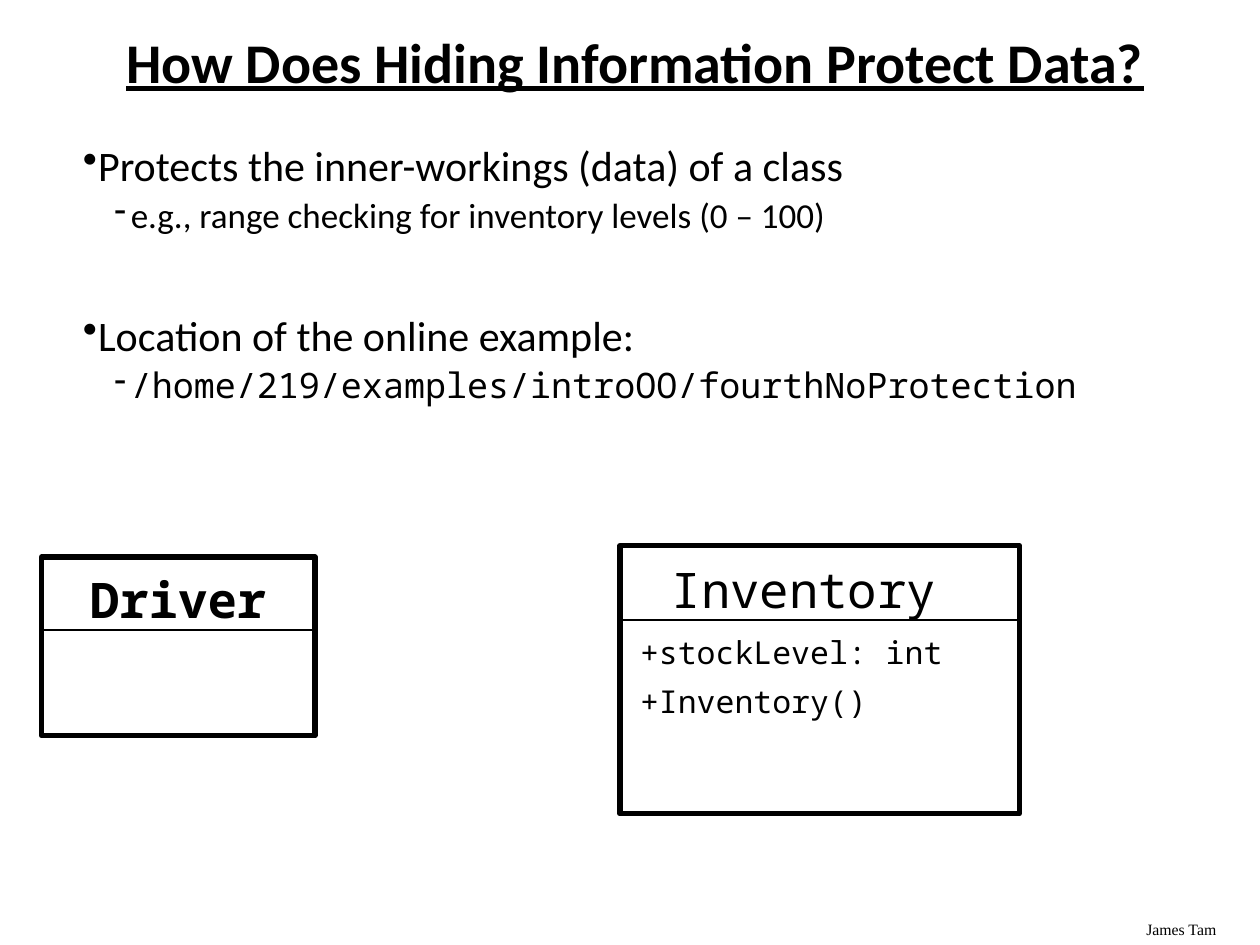
from dataclasses import dataclass

from lxml import etree
from pptx import Presentation
from pptx.dml.color import RGBColor
from pptx.enum import shapes, text
from pptx.oxml.ns import qn
from pptx.util import Inches, Pt

BLACK = RGBColor(0, 0, 0)
SANS, MONO, SERIF = "Calibri", "Noto Sans Mono", "Times New Roman"
TITLE_ONLY = 5


@dataclass
class Line:
    words: str
    size: float
    font: str = SANS
    before: float = 0
    level: int = 0
    bullet: str = ""
    bold: bool = False
    underline: bool = False
    centred: bool = False


@dataclass
class ClassBox:
    heading: Line
    heading_area: tuple
    frame: tuple
    divider_y: float
    members: tuple = ()
    members_area: tuple = ()


POINTS = (
    Line("Protects the inner-workings (data) of a class", 24, bullet="•"),
    Line("e.g., range checking for inventory levels (0 – 100)", 20,
         before=2, level=1, bullet="-"),
    Line("Location of the online example:", 24, before=42, bullet="•"),
    Line("/home/219/examples/introOO/fourthNoProtection", 20, MONO,
         before=2, level=1, bullet="-"),
)
CLASSES = (
    ClassBox(Line("Driver", 28, MONO, bold=True, centred=True),
             (0.58, 4.5, 1.67, 0.44), (0.33, 4.42, 2.17, 1.42), 5),
    ClassBox(Line("Inventory", 28, MONO, centred=True),
             (5.17, 4.42, 2.42, 0.44), (4.92, 4.33, 3.17, 2.13), 4.92,
             (Line("+stockLevel: int", 18, MONO),
              Line("+Inventory()", 18, MONO, before=6.5)),
             (5, 5, 3.03, 1.08)),
)
BULLET_INDENTS = ((0.12, -0.12), (0.38, -0.13))  # left margin, first line


def add_bullet(paragraph, line: Line) -> None:
    margin, indent = BULLET_INDENTS[line.level]
    properties = paragraph._p.get_or_add_pPr()
    properties.set("marL", str(Inches(margin)))
    properties.set("indent", str(Inches(indent)))
    etree.SubElement(properties, qn("a:buChar")).set("char", line.bullet)


def write_lines(frame, lines: tuple, inset: tuple) -> None:
    across, down = map(Inches, inset)
    settings = {"word_wrap": True, "margin_left": across, "margin_right": across,
                "margin_top": down, "margin_bottom": down}
    for name, value in settings.items():
        setattr(frame, name, value)
    for index, line in enumerate(lines):
        paragraph = frame.add_paragraph() if index else frame.paragraphs[0]
        paragraph.alignment = text.PP_ALIGN.CENTER if line.centred else text.PP_ALIGN.LEFT
        paragraph.level = line.level
        paragraph.space_before = Pt(line.before)
        if line.bullet:
            add_bullet(paragraph, line)
        run = paragraph.add_run()
        run.text = line.words
        formats = {"name": line.font, "size": Pt(line.size),
                   "bold": line.bold, "underline": line.underline}
        for name, value in formats.items():
            setattr(run.font, name, value)
        run.font.color.rgb = BLACK


def add_text(slide, area: tuple, lines: tuple, inset: tuple = (0.1, 0.05)) -> None:
    box = slide.shapes.add_textbox(*map(Inches, area))
    write_lines(box.text_frame, lines, inset)


def add_title(slide, words: str) -> None:
    title = slide.shapes.title
    place = {"left": 0.54, "top": 0.1, "width": 9, "height": 0.83}
    for name, value in place.items():
        setattr(title, name, Inches(value))
    write_lines(title.text_frame,
                (Line(words, 32, bold=True, underline=True, centred=True),), (0.1, 0.05))
    title.text_frame.vertical_anchor = text.MSO_ANCHOR.MIDDLE
    title.text_frame.paragraphs[0].line_spacing = 0.9


def add_class(slide, box: ClassBox) -> None:
    label_inset = (0.08, 0.02)
    add_text(slide, box.heading_area, (box.heading,), label_inset)

    frame = slide.shapes.add_shape(shapes.MSO_SHAPE.RECTANGLE, *map(Inches, box.frame))
    frame.shadow.inherit = False
    frame.fill.background()
    frame.line.color.rgb = BLACK
    frame.line.width = Pt(3)

    left, _, width, _ = box.frame
    divider = slide.shapes.add_connector(
        shapes.MSO_CONNECTOR.STRAIGHT, Inches(left), Inches(box.divider_y),
        Inches(left + width), Inches(box.divider_y))
    divider.line.color.rgb = BLACK
    divider.line.width = Pt(1)
    etree.SubElement(divider._element.spPr, qn("a:effectLst"))

    if box.members:
        add_text(slide, box.members_area, box.members, label_inset)


def main() -> None:
    deck = Presentation()
    deck.slide_width, deck.slide_height = Inches(10), Inches(7.5)
    slide = deck.slides.add_slide(deck.slide_layouts[TITLE_ONLY])
    add_text(slide, (9, 7.25, 1, 0.25), (Line("James Tam", 9, SERIF),))
    add_title(slide, "How Does Hiding Information Protect Data?")
    add_text(slide, (0.56, 1.06, 8.88, 2.4), POINTS)
    for box in CLASSES:
        add_class(slide, box)
    deck.save("out.pptx")


if __name__ == "__main__":
    main()
